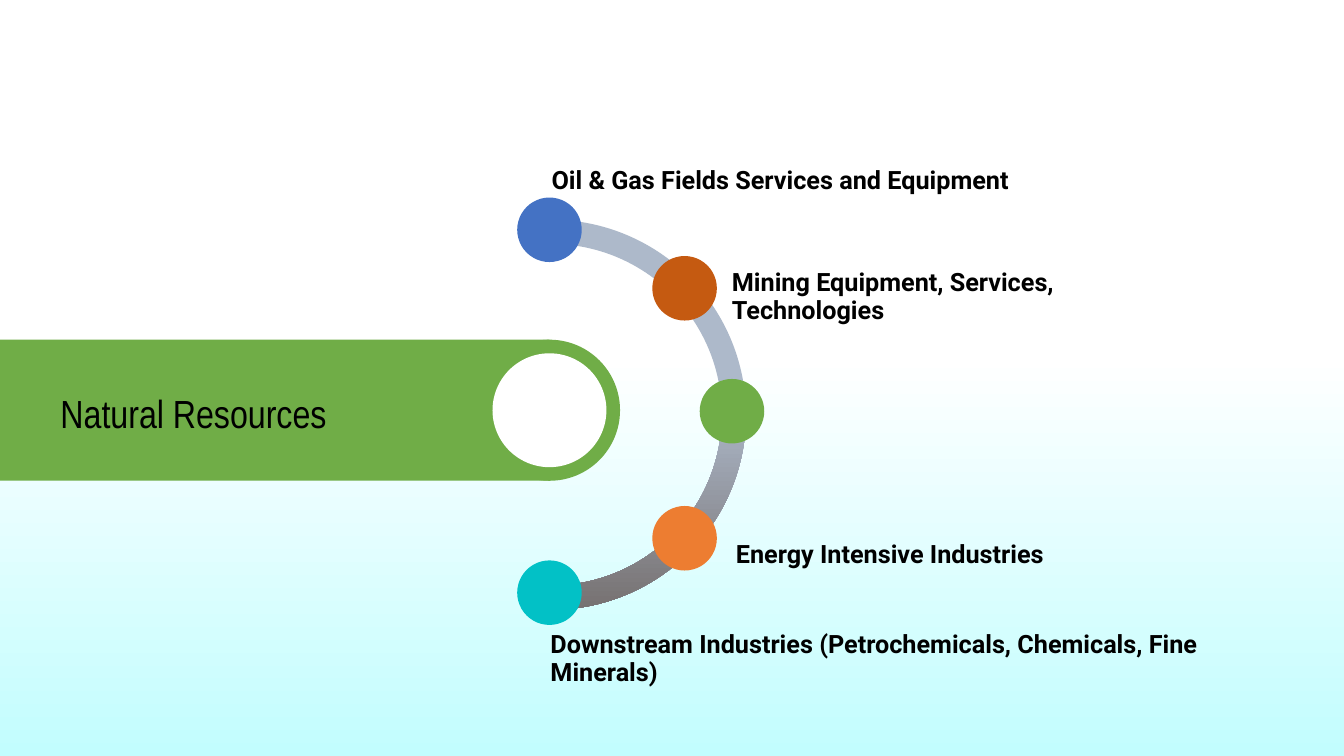
from pptx import Presentation
from pptx.dml.color import RGBColor
from pptx.enum.shapes import MSO_SHAPE as Shape
from pptx.util import Inches, Pt

CELL = 0.1  # side of a square grid cell, inches


def rgb(code):
    return RGBColor.from_string(code)


def grid(*cells):
    return [Inches(n * CELL) for n in cells]


def fade(fill, top, bottom):
    """Vertical gradient that starts just above the middle."""
    fill.gradient()
    fill.gradient_angle = 270
    for stop, place, code in zip(fill.gradient_stops, (0.47, 1), (top, bottom)):
        stop.position = place
        stop.color.rgb = rgb(code)


class Slide:
    """Current slide and its style; all lengths are in grid cells."""
    ink = "000000"
    green = "70AD47"

    def __init__(self, prs):
        self.s = prs.slides.add_slide(prs.slide_layouts[6])
        fade(self.s.background.fill, "FFFFFF", "C2FDFE")

    def shape(self, kind, x, y, w, h, color=None):
        sp = self.s.shapes.add_shape(kind, *grid(x, y, w, h))
        sp.shadow.inherit = False
        sp.line.fill.background()
        if color:
            sp.fill.solid()
            sp.fill.fore_color.rgb = rgb(color)
        return sp

    def disc(self, cx, cy, d, color):
        return self.shape(Shape.OVAL, cx - d / 2, cy - d / 2, d, d, color)

    def half_ring(self, cx, cy, d):
        sp = self.shape(Shape.BLOCK_ARC, cx - d / 2, cy - d / 2, d, d)
        for i, value in enumerate((53.842, 162.03, 0.062)):
            sp.adjustments[i] = value
        sp._element.spPr.xfrm.set("flipH", "1")
        fade(sp.fill, "ADB9CA", "767171")

    def text(self, words, x, y, w, h, size=18, font="Roboto", bold=True, spacing=0.9):
        tf = self.s.shapes.add_textbox(*grid(x, y, w, h)).text_frame
        tf.word_wrap = True
        tf.margin_left = tf.margin_right = tf.margin_top = tf.margin_bottom = 0
        p = tf.paragraphs[0]
        p.text = words
        p.line_spacing = spacing
        p.space_before = Pt(7.5)
        p.font.size, p.font.name, p.font.bold = Pt(size), font, bold
        p.font.color.rgb = rgb(self.ink)


def main():
    prs = Presentation()
    prs.slide_width, prs.slide_height = Inches(13.33), Inches(7.5)
    s = Slide(prs)

    # Half ring with its five nodes
    s.half_ring(54.65, 41.15, 38.7)
    for cx, cy, color in (
        (54.5, 22.8, "4472C4"),
        (67.9, 28.6, "C55A11"),
        (67.9, 53.4, "ED7D31"),
        (54.5, 58.8, "02C1C6"),
        (72.6, 40.8, s.green),
    ):
        s.disc(cx, cy, 6.4, color)

    # Node labels
    for words, x, y, w, h in (
        ("Oil & Gas Fields Services and Equipment", 54.7, 16.6, 50.8, 2.5),
        ("Mining Equipment, Services, Technologies", 72.6, 26.8, 44.6, 3.6),
        ("Energy Intensive Industries", 73, 53.7, 45, 3.7),
        ("Downstream Industries (Petrochemicals, Chemicals, Fine Minerals)",
         54.6, 62.7, 73.3, 5.9),
    ):
        s.text(words, x, y, w, h)

    # Title bar with a round end
    cx, cy, bar = 54.5, 40.7, 14
    s.shape(Shape.RECTANGLE, 0, cy - bar / 2, cx, bar, s.green)
    s.disc(cx, cy, bar, s.green)
    s.disc(cx, cy, 11.3, "FFFFFF")
    s.text("Natural Resources", 6, 38.6, 59.1, 8.9,
           size=28, font="Arial Narrow", bold=False, spacing=1.0)

    prs.save("out.pptx")


if __name__ == "__main__":
    main()
